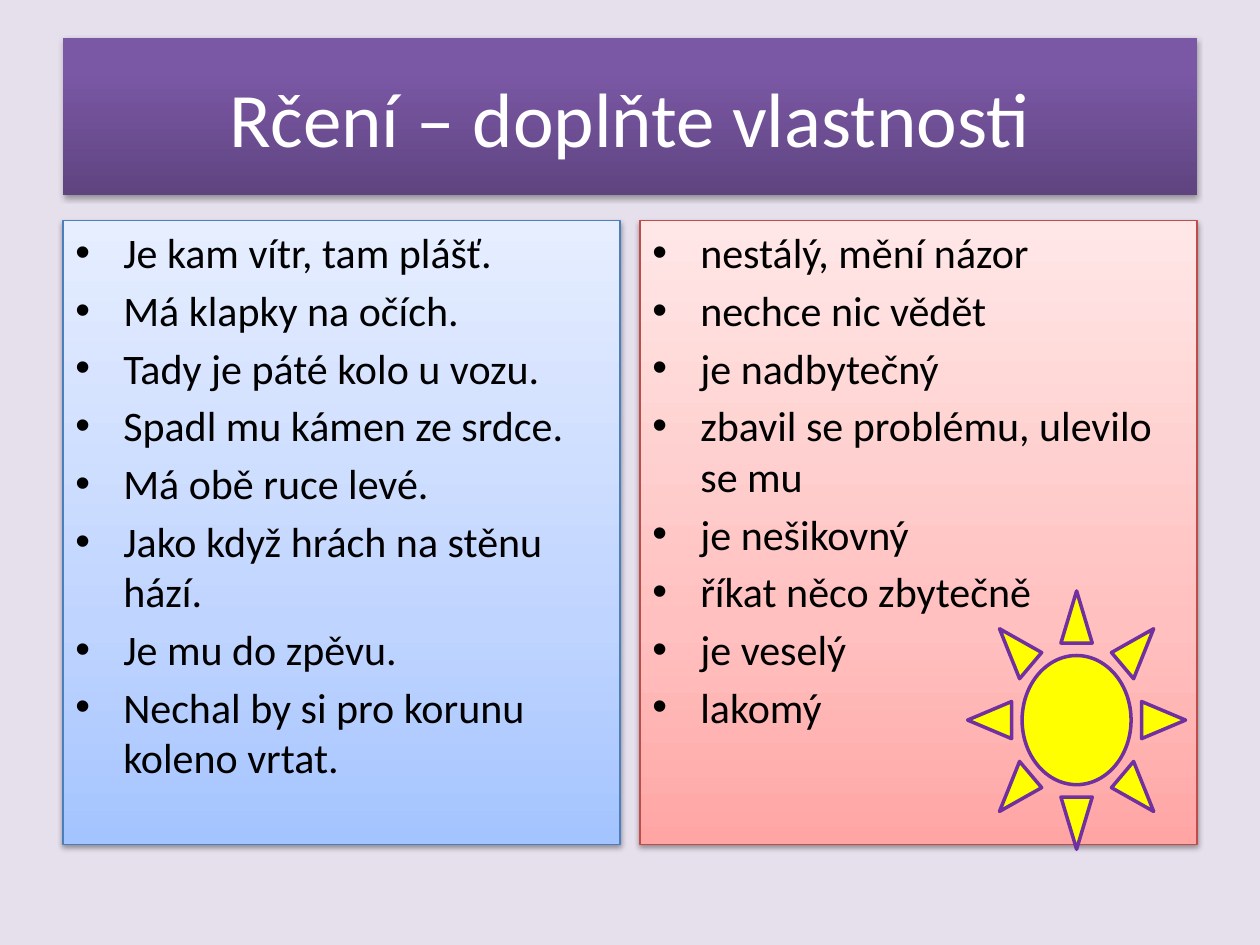
from pptx import Presentation, util as u
from pptx.dml.color import RGBColor
from pptx.enum import shapes, text
from pptx.oxml.ns import qn
from lxml import etree

PX = 9144  # 100 px to the inch


class Theme:
    font = "Calibri"
    back, ink, light = "E6E0EC", "000000", "FFFFFF"
    head, body = 44, 24
    purple = [(0, "5F4480"), (80, "7B58A6"), (100, "7C57A8")]
    blue = [(0, "A4C4FF"), (35, "BFD4FF"), (100, "E6EEFF")]
    red = [(0, "FFA6A5"), (35, "FFC0BF"), (100, "FFE7E7")]
    edges = {"blue": "4B7EBC", "red": "BF4C48"}
    sun, ray = "FFFF00", "7030A0"


SAYINGS = [
    "Je kam vítr, tam plášť.",
    "Má klapky na očích.",
    "Tady je páté kolo u vozu.",
    "Spadl mu kámen ze srdce.",
    "Má obě ruce levé.",
    "Jako když hrách na stěnu hází.",
    "Je mu do zpěvu.",
    "Nechal by si pro korunu koleno vrtat.",
]
TRAITS = [
    "nestálý, mění názor",
    "nechce nic vědět",
    "je nadbytečný",
    "zbavil se problému, ulevilo se mu",
    "je nešikovný",
    "říkat něco zbytečně",
    "je veselý",
    "lakomý",
]


def rgb(code):
    return RGBColor.from_string(code)


def emu(box):
    return [u.Emu(n * PX) for n in box]


def put(obj, **vals):
    for key, val in vals.items():
        setattr(obj, key, val)


def node(up, tag, **vals):
    return etree.SubElement(up, qn("a:" + tag), {k: str(v) for k, v in vals.items()})


def blend(shape, stops):
    """Upward gradient with any number of stops."""
    shape.fill.gradient()
    grad = shape.element.spPr.find(qn("a:gradFill"))
    for kid in list(grad):
        grad.remove(kid)
    row = node(grad, "gsLst")
    for pos, code in stops:
        node(node(row, "gs", pos=pos * 1000), "srgbClr", val=code)
    node(grad, "lin", ang=270 * 60000, scaled=0)


def shade(shape, dist, alpha):
    """Soft shadow straight below."""
    shape.shadow.inherit = False
    list_ = shape.element.spPr.find(qn("a:effectLst"))
    drop = node(list_, "outerShdw", blurRad=40000, dist=dist,
                dir=90 * 60000, rotWithShape=0)
    node(node(drop, "srgbClr", val=Theme.ink), "alpha", val=alpha * 1000)


def style(para, size, color, align):
    para.alignment = align
    put(para.font, name=Theme.font, size=u.Pt(size))
    para.font.color.rgb = rgb(color)


def outline(shape, color, width):
    shape.line.color.rgb = rgb(color)
    shape.line.width = u.Pt(width)


def banner(slide, box, words):
    title = slide.shapes.title
    put(title, **dict(zip(("left", "top", "width", "height"), emu(box))))
    blend(title, Theme.purple)
    shade(title, 23000, 35)
    frame = title.text_frame
    put(frame, text=words, word_wrap=True, auto_size=text.MSO_AUTO_SIZE.NONE,
        vertical_anchor=text.MSO_ANCHOR.MIDDLE)
    style(frame.paragraphs[0], Theme.head, Theme.light, text.PP_ALIGN.CENTER)


def panel(slide, box, items, stops, edge):
    card = slide.shapes.add_shape(shapes.MSO_SHAPE.RECTANGLE, *emu(box))
    blend(card, stops)
    outline(card, edge, 0.75)
    shade(card, 20000, 38)
    frame = card.text_frame
    put(frame, word_wrap=True, vertical_anchor=text.MSO_ANCHOR.TOP)
    for i, item in enumerate(items):
        para = frame.add_paragraph() if i else frame.paragraphs[0]
        para.text = item
        # Hanging bullet
        props = para._p.get_or_add_pPr()
        props.set("marL", str(38 * PX))
        props.set("indent", str(-38 * PX))
        node(props, "buFont", typeface="Arial")
        node(props, "buChar", char="•")
        para.space_before = u.Pt(4.2 if i else 0)
        style(para, Theme.body, Theme.ink, text.PP_ALIGN.LEFT)


def sun(slide, box):
    star = slide.shapes.add_shape(shapes.MSO_SHAPE.SUN, *emu(box))
    star.shadow.inherit = False
    star.fill.solid()
    star.fill.fore_color.rgb = rgb(Theme.sun)
    outline(star, Theme.ray, 2)


def main():
    deck = Presentation()
    put(deck, slide_width=u.Emu(1000 * PX), slide_height=u.Emu(750 * PX))
    slide = deck.slides.add_slide(deck.slide_layouts[5])
    slide.background.fill.solid()
    slide.background.fill.fore_color.rgb = rgb(Theme.back)

    # Title band
    left, wide, gap = 50, 900, 16
    banner(slide, (left, 30, wide, 125), "Rčení – doplňte vlastnosti")

    # Two equal columns
    half = (wide - gap) // 2
    columns = [(SAYINGS, Theme.blue, Theme.edges["blue"]),
               (TRAITS, Theme.red, Theme.edges["red"])]
    for i, (items, stops, edge) in enumerate(columns):
        panel(slide, (left + i * (half + gap), 175, half, 495), items, stops, edge)

    # Decoration
    sun(slide, (768, 469, 173, 205))
    deck.save("out.pptx")


if __name__ == "__main__":
    main()
